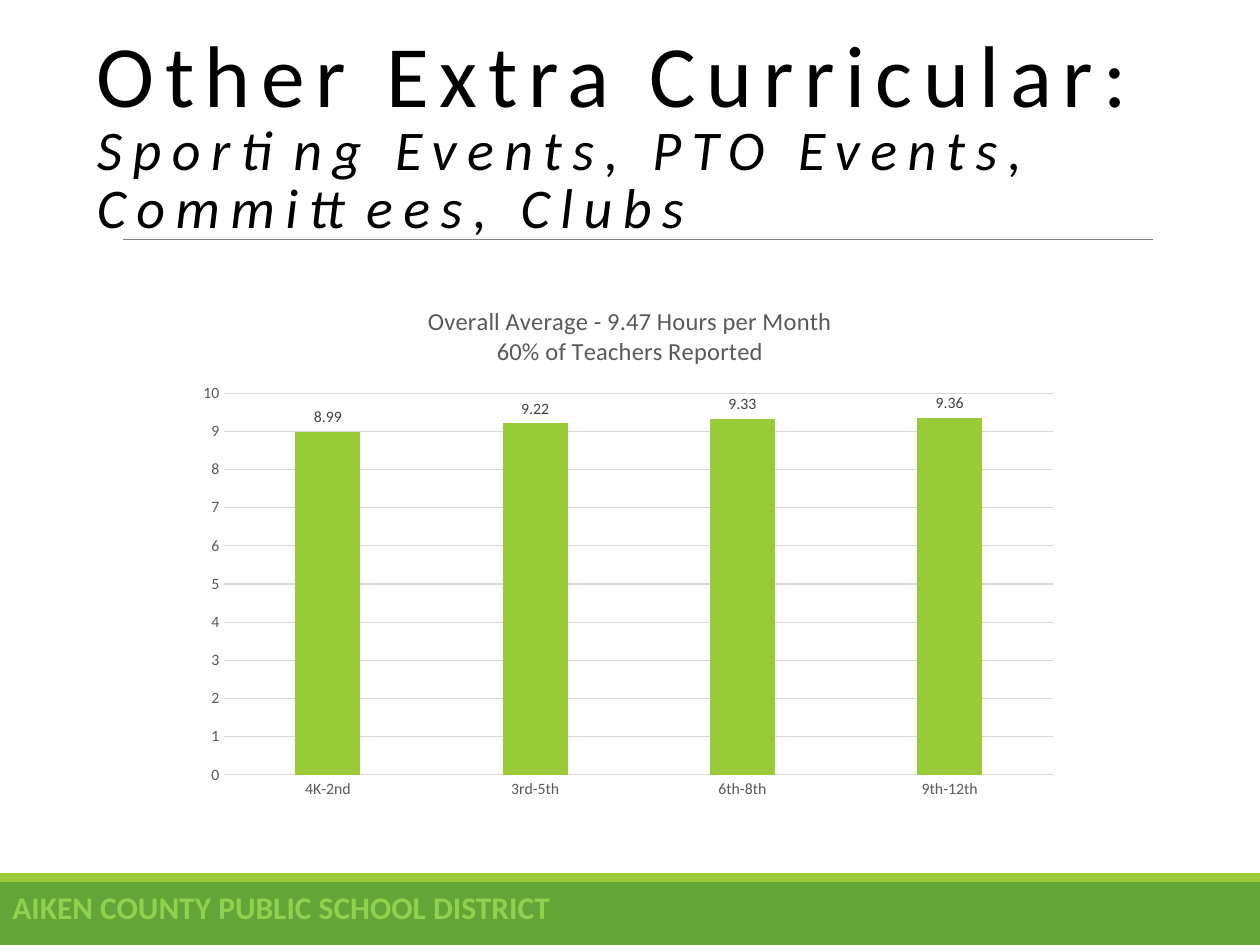
from lxml import etree
from pptx import Presentation
from pptx.chart.data import CategoryChartData
from pptx.dml.color import RGBColor
from pptx.enum.chart import XL_CHART_TYPE, XL_LABEL_POSITION, XL_TICK_MARK
from pptx.enum.shapes import MSO_CONNECTOR, MSO_SHAPE
from pptx.enum.text import MSO_ANCHOR
from pptx.oxml.ns import qn
from pptx.util import Inches, Pt

COLUMNS = XL_CHART_TYPE.COLUMN_CLUSTERED
OUTSIDE_END = XL_LABEL_POSITION.OUTSIDE_END
NO_TICK = XL_TICK_MARK.NONE
STRAIGHT = MSO_CONNECTOR.STRAIGHT
RECTANGLE = MSO_SHAPE.RECTANGLE
TOP, BOTTOM = MSO_ANCHOR.TOP, MSO_ANCHOR.BOTTOM

FONT = "Calibri"
BLACK = RGBColor(0x00, 0x00, 0x00)
DARK_GREEN = RGBColor(0x63, 0xA5, 0x37)
LIME = RGBColor(0x99, 0xCB, 0x38)
FOOTER_GREEN = RGBColor(0x92, 0xD0, 0x50)
RULE_GREY = RGBColor(0x80, 0x80, 0x80)
GRID_GREY = RGBColor(0xD9, 0xD9, 0xD9)
AXIS_GREY = RGBColor(0x59, 0x59, 0x59)
LABEL_GREY = RGBColor(0x40, 0x40, 0x40)

TITLE_FORMAT = {"size": Pt(50)}
SUBTITLE_FORMAT = {"size": Pt(32), "italic": True}
FOOTER_FORMAT = {"size": Pt(18), "bold": True}
CHART_TITLE_FORMAT = {"size": Pt(14), "bold": False}
PLOT_AREA = {"x": 0.04, "y": 0.21, "w": 0.94, "h": 0.73}
HOURS = {"4K-2nd": 8.99, "3rd-5th": 9.22, "6th-8th": 9.33, "9th-12th": 9.36}


def format_font(font, color, values):
    font.name = FONT
    font.color.rgb = color
    for name, value in values.items():
        setattr(font, name, value)


def format_line(line, color, width):
    line.color.rgb = color
    line.width = Pt(width)


def add_band(page, top, height, color):
    band = page.shapes.add_shape(
        RECTANGLE, Inches(0), Inches(top), Inches(10), Inches(height)
    )
    band.shadow.inherit = False
    band.fill.solid()
    band.fill.fore_color.rgb = color
    band.line.fill.background()


def add_rule(page, left, right, top):
    rule = page.shapes.add_connector(
        STRAIGHT, Inches(left), Inches(top), Inches(right), Inches(top)
    )
    format_line(rule.line, RULE_GREY, 0.5)
    properties = rule.element.find(qn("p:spPr"))
    etree.SubElement(properties, qn("a:effectLst"))


def add_text(page, place, lines, color, anchor=TOP, line_spacing=None, tracking=0):
    box = page.shapes.add_textbox(*map(Inches, place))
    frame = box.text_frame
    frame.word_wrap = True
    frame.vertical_anchor = anchor
    para = frame.paragraphs[0]
    para.line_spacing = line_spacing
    for index, (text, values) in enumerate(lines):
        if index:
            para.add_line_break()
        span = para.add_run()
        span.text = text
        format_font(span.font, color, values)
        if tracking:
            span.font._element.set("spc", str(tracking * 100))


def set_plot_area(chart):
    plot_area = chart.element.find(".//" + qn("c:plotArea"))
    for old_layout in plot_area.findall(qn("c:layout")):
        plot_area.remove(old_layout)
    layout = etree.Element(qn("c:layout"))
    manual = etree.SubElement(layout, qn("c:manualLayout"))
    modes = {"layoutTarget": "inner", "xMode": "edge", "yMode": "edge"}
    for name, value in {**modes, **PLOT_AREA}.items():
        etree.SubElement(manual, qn(f"c:{name}"), val=str(value))
    plot_area.insert(0, layout)


def format_chart_title(chart, lines):
    chart.has_title = True
    frame = chart.chart_title.text_frame
    frame.text = "\n".join(lines)
    for para in frame.paragraphs:
        for span in para.runs:
            format_font(span.font, AXIS_GREY, CHART_TITLE_FORMAT)


def format_axes(chart):
    for axis in (chart.category_axis, chart.value_axis):
        axis.major_tick_mark = NO_TICK
        axis.minor_tick_mark = NO_TICK
        format_font(axis.tick_labels.font, AXIS_GREY, {"size": Pt(9)})
    format_line(chart.category_axis.format.line, GRID_GREY, 0.75)
    hours_axis = chart.value_axis
    scale = {"minimum_scale": 0, "maximum_scale": 10, "major_unit": 1}
    for name, value in scale.items():
        setattr(hours_axis, name, value)
    hours_axis.format.line.fill.background()
    format_line(hours_axis.major_gridlines.format.line, GRID_GREY, 0.75)


def format_columns(plot):
    layout = {"gap_width": 219, "overlap": -27, "vary_by_categories": False}
    for name, value in layout.items():
        setattr(plot, name, value)
    series = plot.series[0]
    series.format.fill.solid()
    series.format.fill.fore_color.rgb = LIME
    labels = series.data_labels
    labels.show_value = True
    labels.position = OUTSIDE_END
    format_font(labels.font, LABEL_GREY, {"size": Pt(9)})


def add_hours_chart(page, place):
    data = CategoryChartData()
    data.categories = list(HOURS)
    data.add_series("Series 1", list(HOURS.values()))
    chart = page.shapes.add_chart(COLUMNS, *map(Inches, place), data).chart
    format_font(chart.font, BLACK, {"size": Pt(10)})
    chart.has_legend = False
    format_chart_title(
        chart,
        ["Overall Average - 9.47 Hours per Month", "60% of Teachers Reported"],
    )
    format_axes(chart)
    format_columns(chart.plots[0])
    set_plot_area(chart)


def main():
    deck = Presentation()
    deck.slide_width, deck.slide_height = Inches(10), Inches(7.5)
    page = deck.slides.add_slide(deck.slide_layouts[6])
    add_band(page, 7, 0.5, DARK_GREEN)
    add_band(page, 6.93, 0.07, LIME)
    add_rule(page, 0.98, 9.15, 1.9)
    heading = [
        ("Other Extra Curricular:", TITLE_FORMAT),
        ("Sporting Events, PTO Events, Committees, Clubs", SUBTITLE_FORMAT),
    ]
    add_text(page, (0.67, 0.2, 9.33, 1.75), heading, BLACK, BOTTOM, 0.85, 6)
    footer = [("AIKEN COUNTY PUBLIC SCHOOL DISTRICT", FOOTER_FORMAT)]
    add_text(page, (0, 7, 10, 0.4), footer, FOOTER_GREEN)
    add_hours_chart(page, (1.5, 2.25, 7, 4.15))
    deck.save("out.pptx")


if __name__ == "__main__":
    main()
